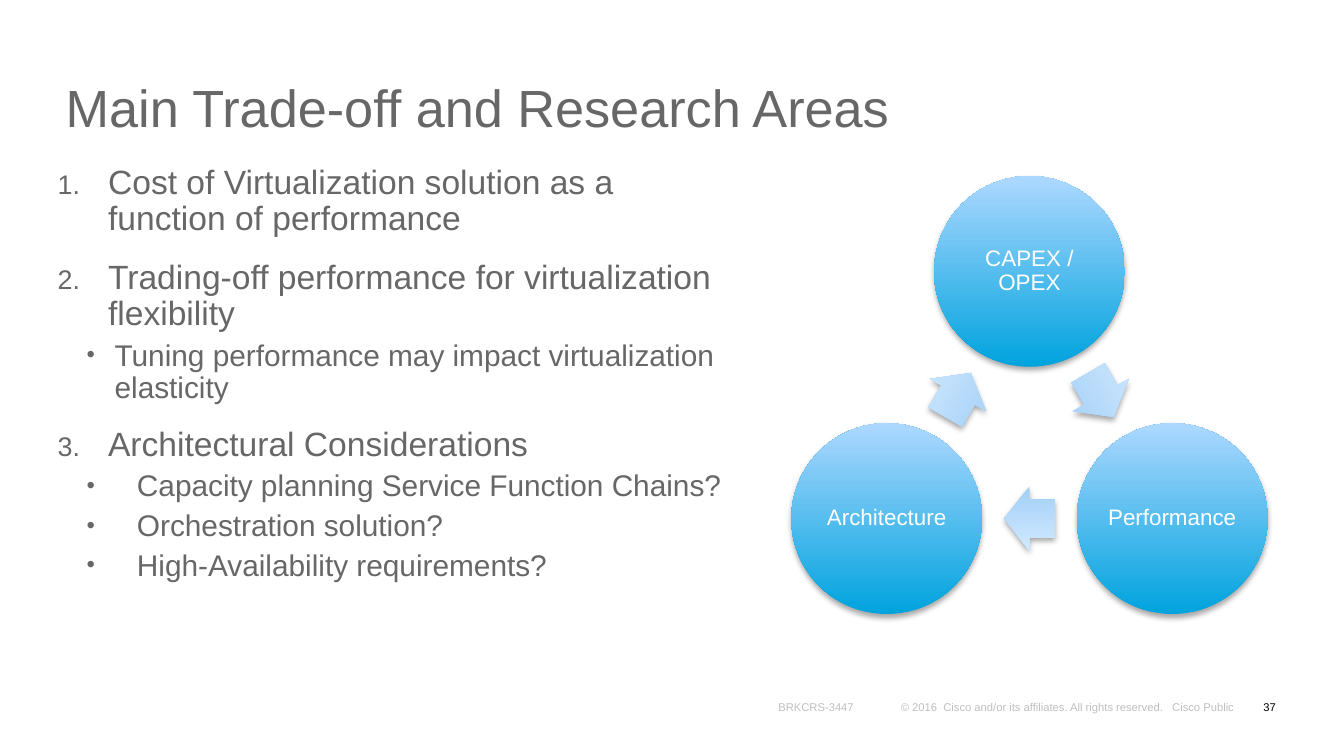
from dataclasses import dataclass
from math import cos, radians, sin

from lxml.etree import SubElement
from pptx import Presentation
from pptx.dml.color import RGBColor
from pptx.enum.shapes import MSO_SHAPE as Preset
from pptx.enum.text import MSO_ANCHOR as Anchor, PP_ALIGN as Align
from pptx.oxml.ns import qn
from pptx.shapes.autoshape import Shape
from pptx.slide import Slide
from pptx.text.text import TextFrame, _Paragraph as Paragraph
from pptx.util import Pt

GREY = RGBColor(0x67, 0x67, 0x67)
PALE_GREY = RGBColor(0xBF, 0xBF, 0xBF)
BLACK = RGBColor(0, 0, 0)
WHITE = RGBColor(0xFF, 0xFF, 0xFF)
CIRCLE_COLORS = (RGBColor(0x00, 0xA3, 0xDE), RGBColor(0xAD, 0xD8, 0xFF))
ARROW_COLORS = (RGBColor(0xA2, 0xCF, 0xF6), RGBColor(0xD1, 0xE9, 0xFF))

FONT = "Arial"
CYCLE_X, CYCLE_Y, CYCLE_RADIUS = 551.5, 233.7, 88.3
CIRCLE_SIZE = 102.2
ARROW_WIDTH, ARROW_HEIGHT = 27.2, 34.5


@dataclass(frozen=True)
class Label:
    text: str
    left: float
    top: float
    width: float
    height: float
    size: float
    color: RGBColor
    anchor: Anchor
    align: Align = Align.LEFT
    margins: tuple[float, float] = (7.2, 3.6)
    spacing: float = 1.0


@dataclass(frozen=True)
class ListStyle:
    level: int
    size: float
    before: float
    margin: float
    hanging: float
    numbered: bool = False


NUMBERED = ListStyle(0, 18, 12, 27, 27, numbered=True)
DETAIL = ListStyle(1, 16, 4, 30.5, 15)
QUESTION = ListStyle(1, 16, 4, 42.5, 27)

LABELS = (
    Label("© 2016  Cisco and/or its affiliates. All rights reserved.   Cisco Public",
          471.6, 372.2, 194.4, 12.2, 6, PALE_GREY, Anchor.BOTTOM, Align.RIGHT, (5, 2.2)),
    Label("BRKCRS-3447", 280.1, 372.2, 182.2, 12.2, 6, PALE_GREY,
          Anchor.BOTTOM, Align.RIGHT, (5, 2.2)),
    Label("37", 662.4, 367.9, 28.1, 21.6, 6, BLACK, Anchor.MIDDLE, Align.RIGHT),
    Label("Main Trade-off and Research Areas", 28.1, 17.3, 670.3, 60.5, 28, GREY,
          Anchor.BOTTOM, spacing=0.9),
)
ITEMS = (
    ("Cost of Virtualization solution as a function of performance", NUMBERED),
    ("Trading-off performance for virtualization flexibility", NUMBERED),
    ("Tuning performance may impact virtualization elasticity", DETAIL),
    ("Architectural Considerations", NUMBERED),
    ("Capacity planning Service Function Chains?", QUESTION),
    ("Orchestration solution?", QUESTION),
    ("High-Availability requirements?", QUESTION),
)
CYCLE = ("CAPEX / OPEX", "Performance", "Architecture")


def set_font(para: Paragraph, size: float, color: RGBColor) -> None:
    para.font.name = FONT
    para.font.size = Pt(size)
    para.font.color.rgb = color


def set_margins(frame: TextFrame, across: float, down: float) -> None:
    frame.margin_left = frame.margin_right = Pt(across)
    frame.margin_top = frame.margin_bottom = Pt(down)


def add_label(page: Slide, label: Label) -> None:
    box = page.shapes.add_textbox(Pt(label.left), Pt(label.top),
                                  Pt(label.width), Pt(label.height))
    frame = box.text_frame
    frame.word_wrap = True
    frame.vertical_anchor = label.anchor
    set_margins(frame, *label.margins)
    para = frame.paragraphs[0]
    para.text = label.text
    para.alignment = label.align
    para.line_spacing = label.spacing
    set_font(para, label.size, label.color)


def add_marker(para: Paragraph, style: ListStyle) -> None:
    """Give the paragraph its hanging indent and its number or bullet."""
    props = para._p.get_or_add_pPr()
    props.set("marL", str(Pt(style.margin)))
    props.set("indent", str(-Pt(style.hanging)))
    SubElement(props, qn("a:buSzPct"), val="80000")
    SubElement(props, qn("a:buFont"), typeface=FONT)
    if style.numbered:
        SubElement(props, qn("a:buAutoNum"), type="arabicPeriod")
    else:
        SubElement(props, qn("a:buChar"), char="•")


def add_body(page: Slide) -> None:
    frame = page.shapes.add_textbox(Pt(23.8), Pt(85), Pt(375.8), Pt(267.8)).text_frame
    frame.word_wrap = True
    for index, (text, style) in enumerate(ITEMS):
        para = frame.add_paragraph() if index else frame.paragraphs[0]
        para.text = text
        para.level = style.level
        para.line_spacing = 0.9
        if index:
            para.space_before = Pt(style.before)
        add_marker(para, style)
        set_font(para, style.size, GREY)


def add_cycle_shape(page: Slide, preset: Preset, angle: float, radius: float,
                    width: float, height: float,
                    colors: tuple[RGBColor, RGBColor]) -> Shape:
    """Centre a shaded shape on the cycle, at an angle clockwise from the top."""
    x = CYCLE_X + radius * sin(radians(angle))
    y = CYCLE_Y - radius * cos(radians(angle))
    shape = page.shapes.add_shape(preset, Pt(x - width / 2), Pt(y - height / 2),
                                  Pt(width), Pt(height))
    shape.fill.gradient()
    shape.fill.gradient_angle = 90
    for stop, color in zip(shape.fill.gradient_stops, colors):
        stop.color.rgb = color
    shape.line.fill.background()
    shape.shadow.inherit = False
    effects = shape._element.spPr.find(qn("a:effectLst"))
    shadow = SubElement(effects, qn("a:outerShdw"), blurRad=str(Pt(3.1)),
                        dist=str(Pt(1.8)), dir="5400000", rotWithShape="0")
    shade = SubElement(shadow, qn("a:srgbClr"), val=str(BLACK))
    SubElement(shade, qn("a:alpha"), val="35000")
    return shape


def add_cycle(page: Slide) -> None:
    step = 360 / len(CYCLE)
    for index, text in enumerate(CYCLE):
        circle = add_cycle_shape(page, Preset.OVAL, index * step, CYCLE_RADIUS,
                                 CIRCLE_SIZE, CIRCLE_SIZE, CIRCLE_COLORS)
        frame = circle.text_frame
        frame.word_wrap = True
        frame.vertical_anchor = Anchor.MIDDLE
        set_margins(frame, 1.4, 1.4)
        para = frame.paragraphs[0]
        para.text = text
        para.alignment = Align.CENTER
        para.line_spacing = 0.9
        set_font(para, 12, WHITE)

        halfway = (index + 0.5) * step
        arrow = add_cycle_shape(page, Preset.RIGHT_ARROW, halfway,
                                CYCLE_RADIUS * cos(radians(step / 2)),
                                ARROW_WIDTH, ARROW_HEIGHT, ARROW_COLORS)
        arrow.adjustments[0] = 0.6
        arrow.adjustments[1] = 0.5
        arrow.rotation = halfway


def main() -> None:
    deck = Presentation()
    deck.slide_width, deck.slide_height = Pt(720), Pt(405)
    page = deck.slides.add_slide(deck.slide_layouts[6])
    for label in LABELS:
        add_label(page, label)
    add_body(page)
    add_cycle(page)
    deck.save("out.pptx")


if __name__ == "__main__":
    main()
